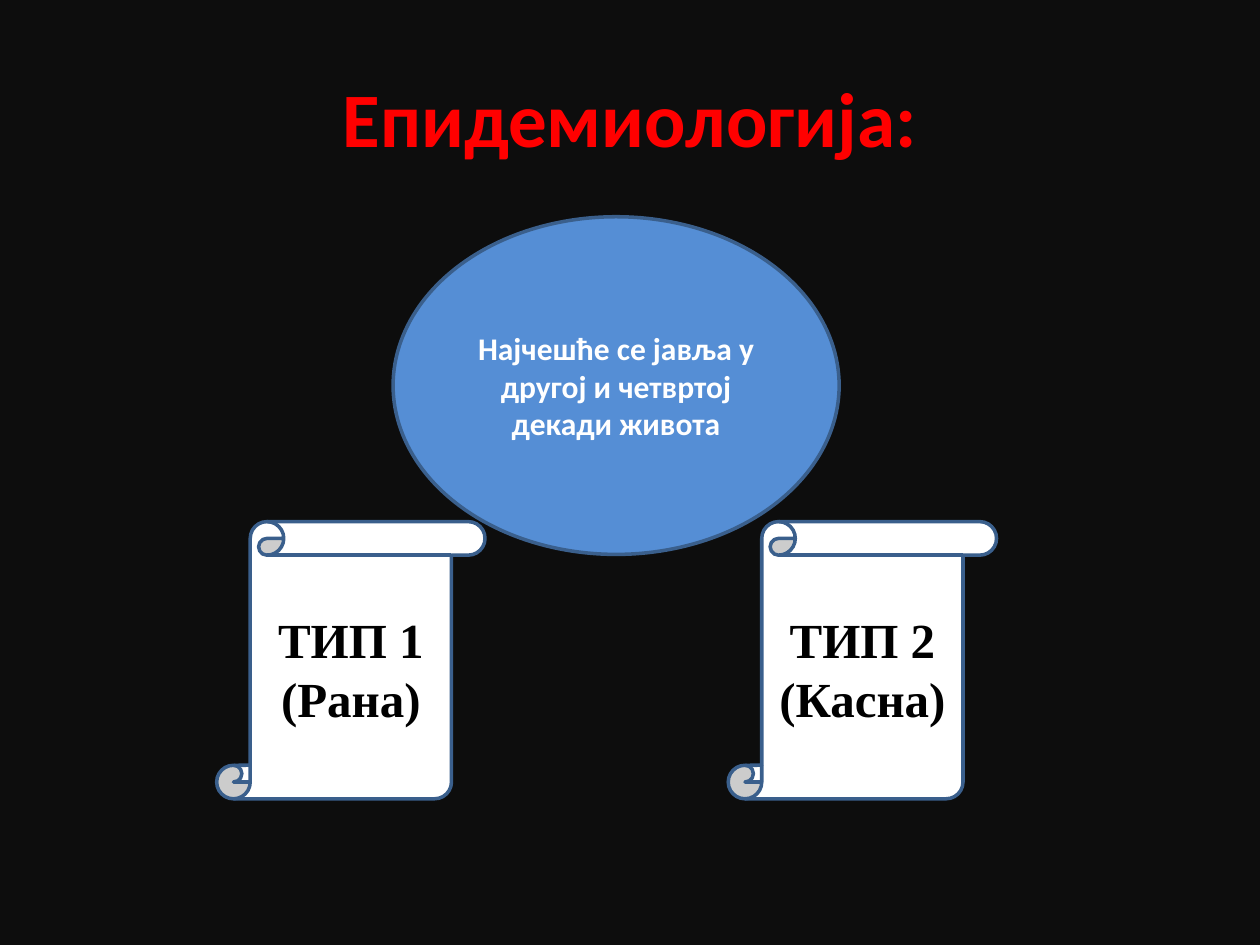
from pptx import Presentation
from pptx.dml.color import RGBColor
from pptx.enum.shapes import MSO_SHAPE
from pptx.enum.text import MSO_ANCHOR, PP_ALIGN
from pptx.util import Inches, Pt

TITLE = "Епидемиологија:"
FACT = "Најчешће се јавља у другој и четвртој декади живота"
TYPES = [("ТИП 1", "(Рана)"), ("ТИП 2", "(Касна)")]

COLORS = {"back": "0D0D0D", "title": "FF0000", "oval": "558ED5",
          "edge": "3A5F8C", "white": "FFFFFF", "black": "000000"}
WIDE, HIGH = 10, 7.5
MARGIN = WIDE / 20
LEFT, STEP = 1.72, 4.06  # first scroll and distance to the next


def color(name):
    return RGBColor.from_string(COLORS[name])


def write(shape, lines, size, font, ink):
    """Put centred bold lines into a shape, one paragraph each."""
    frame = shape.text_frame
    frame.word_wrap = True
    frame.vertical_anchor = MSO_ANCHOR.MIDDLE
    for i, line in enumerate(lines):
        para = frame.add_paragraph() if i else frame.paragraphs[0]
        para.alignment = PP_ALIGN.CENTER
        run = para.add_run()
        run.text = line
        run.font.size = Pt(size)
        run.font.name = font
        run.font.bold = True
        run.font.color.rgb = color(ink)


def draw(slide, kind, box, fill):
    shape = slide.shapes.add_shape(kind, *map(Inches, box))
    shape.shadow.inherit = False
    shape.fill.solid()
    shape.fill.fore_color.rgb = color(fill)
    shape.line.color.rgb = color("edge")
    shape.line.width = Pt(2)
    return shape


def main():
    deck = Presentation()
    deck.slide_width, deck.slide_height = Inches(WIDE), Inches(HIGH)
    slide = deck.slides.add_slide(deck.slide_layouts[6])
    slide.background.fill.solid()
    slide.background.fill.fore_color.rgb = color("back")

    box = MARGIN, HIGH / 25, WIDE - 2 * MARGIN, HIGH / 6
    title = slide.shapes.add_textbox(*map(Inches, box))
    write(title, [TITLE], 44, "Calibri", "title")

    oval = draw(slide, MSO_SHAPE.OVAL, (3.12, 1.72, 3.54, 2.68), "oval")
    write(oval, [FACT], 18, "Calibri", "white")

    for i, lines in enumerate(TYPES):
        box = LEFT + i * STEP, 4.14, 2.13, 2.2
        scroll = draw(slide, MSO_SHAPE.VERTICAL_SCROLL, box, "white")
        write(scroll, lines, 28, "Times New Roman", "black")

    deck.save("out.pptx")


if __name__ == "__main__":
    main()
